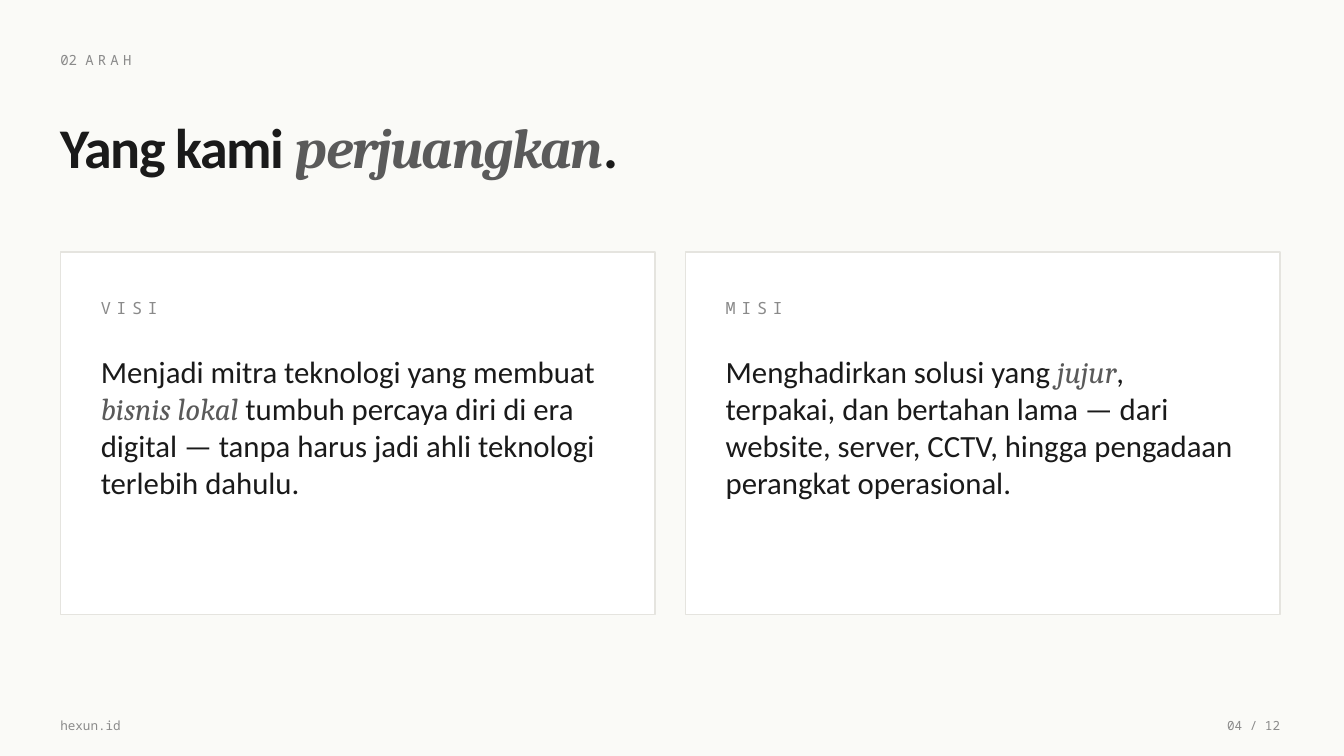
import pptx
import pptx.dml.color
import pptx.enum.shapes
import pptx.enum.text
import pptx.util

Cm = pptx.util.Cm
Pt = pptx.util.Pt
ANCHOR = pptx.enum.text.MSO_ANCHOR
ALIGN = pptx.enum.text.PP_ALIGN

COLORS = {
    "background": "FAFAF7",
    "card": "FFFFFF",
    "border": "E5E4DF",
    "ink": "1A1A1A",
    "accent": "5A5A5A",
    "muted": "8A8A8A",
}
FONTS = {"ink": "Calibri", "accent": "Cambria", "muted": "Noto Sans Mono"}

SECTION = [("02 ", "muted", 0), ("ARAH", "muted", 3)]
TITLE = [("Yang kami ", "ink", -1), ("perjuangkan", "accent", -1), (".", "ink", -1)]
CARDS = [
    ("VISI", [
        ("Menjadi mitra teknologi yang membuat ", "ink", 0),
        ("bisnis lokal ", "accent", 0),
        ("tumbuh percaya diri di era digital — tanpa harus jadi ahli teknologi "
         "terlebih dahulu.", "ink", 0),
    ]),
    ("MISI", [
        ("Menghadirkan solusi yang ", "ink", 0),
        ("jujur", "accent", 0),
        (", terpakai, dan bertahan lama — dari website, server, CCTV, hingga "
         "pengadaan perangkat operasional.", "ink", 0),
    ]),
]
SITE = "hexun.id"
PAGE_NUMBER = "04 / 12"

MARGIN = 1.52
CARD_TOP, CARD_WIDTH, CARD_HEIGHT, CARD_GAP = 6.35, 14.99, 9.14, 0.76
PADDING = 1.02
LABEL_HEIGHT = 0.76
FOOTER_TOP = 17.91
NUMBER_WIDTH = 2.03


def color(name):
    return pptx.dml.color.RGBColor.from_string(COLORS[name])


def style_font(font, style):
    font.name = FONTS[style]
    font.color.rgb = color(style)
    if style == "accent":
        font.italic = True


def write(box, spans, size, anchor=ANCHOR.MIDDLE, align=ALIGN.LEFT, bold=False):
    frame = box.text_frame
    frame.word_wrap = True
    frame.auto_size = pptx.enum.text.MSO_AUTO_SIZE.NONE
    frame.vertical_anchor = anchor
    frame.margin_left = frame.margin_top = frame.margin_right = frame.margin_bottom = 0
    para = frame.paragraphs[0]
    para.alignment = align
    para.font.size = Pt(size)
    para.font.bold = bold
    styles = {style for _, style, _ in spans}
    if len(styles) == 1:
        style_font(para.font, spans[0][1])
    for text, style, spacing in spans:
        span = para.add_run()
        span.text = text
        if len(styles) > 1:
            style_font(span.font, style)
        if spacing:
            span._r.get_or_add_rPr().set("spc", str(spacing * 100))


def add_text(page, left, top, width, height, spans, size, **options):
    box = page.shapes.add_textbox(Cm(left), Cm(top), Cm(width), Cm(height))
    write(box, spans, size, **options)


def add_card(page, left, label, body):
    card = page.shapes.add_shape(
        pptx.enum.shapes.MSO_SHAPE.RECTANGLE,
        Cm(left), Cm(CARD_TOP), Cm(CARD_WIDTH), Cm(CARD_HEIGHT))
    card.shadow.inherit = False
    card.fill.solid()
    card.fill.fore_color.rgb = color("card")
    card.line.color.rgb = color("border")
    card.line.width = Pt(1)
    inner = left + PADDING
    add_text(page, inner, CARD_TOP + PADDING, 7.62, LABEL_HEIGHT,
             [(label, "muted", 4)], 12)
    add_text(page, inner, CARD_TOP + 2.54, CARD_WIDTH - 2 * PADDING, 6.1,
             body, 22, anchor=ANCHOR.TOP)


def main():
    deck = pptx.Presentation()
    deck.slide_width, deck.slide_height = Cm(33.87), Cm(19.05)
    page = deck.slides.add_slide(deck.slide_layouts[5])
    page.background.fill.solid()
    page.background.fill.fore_color.rgb = color("background")

    add_text(page, MARGIN, 1.14, 20.32, LABEL_HEIGHT, SECTION, 10)
    title = page.shapes.title
    title.left, title.top, title.width, title.height = (
        Cm(MARGIN), Cm(2.54), Cm(22.86), Cm(2.29))
    write(title, TITLE, 40, bold=True)

    for index, (label, body) in enumerate(CARDS):
        add_card(page, MARGIN + index * (CARD_WIDTH + CARD_GAP), label, body)

    right_edge = MARGIN + 2 * CARD_WIDTH + CARD_GAP
    add_text(page, MARGIN, FOOTER_TOP, 5.08, LABEL_HEIGHT, [(SITE, "muted", 0)], 9)
    add_text(page, right_edge - NUMBER_WIDTH, FOOTER_TOP, NUMBER_WIDTH, LABEL_HEIGHT,
             [(PAGE_NUMBER, "muted", 0)], 9, align=ALIGN.RIGHT)
    deck.save("out.pptx")


if __name__ == "__main__":
    main()
